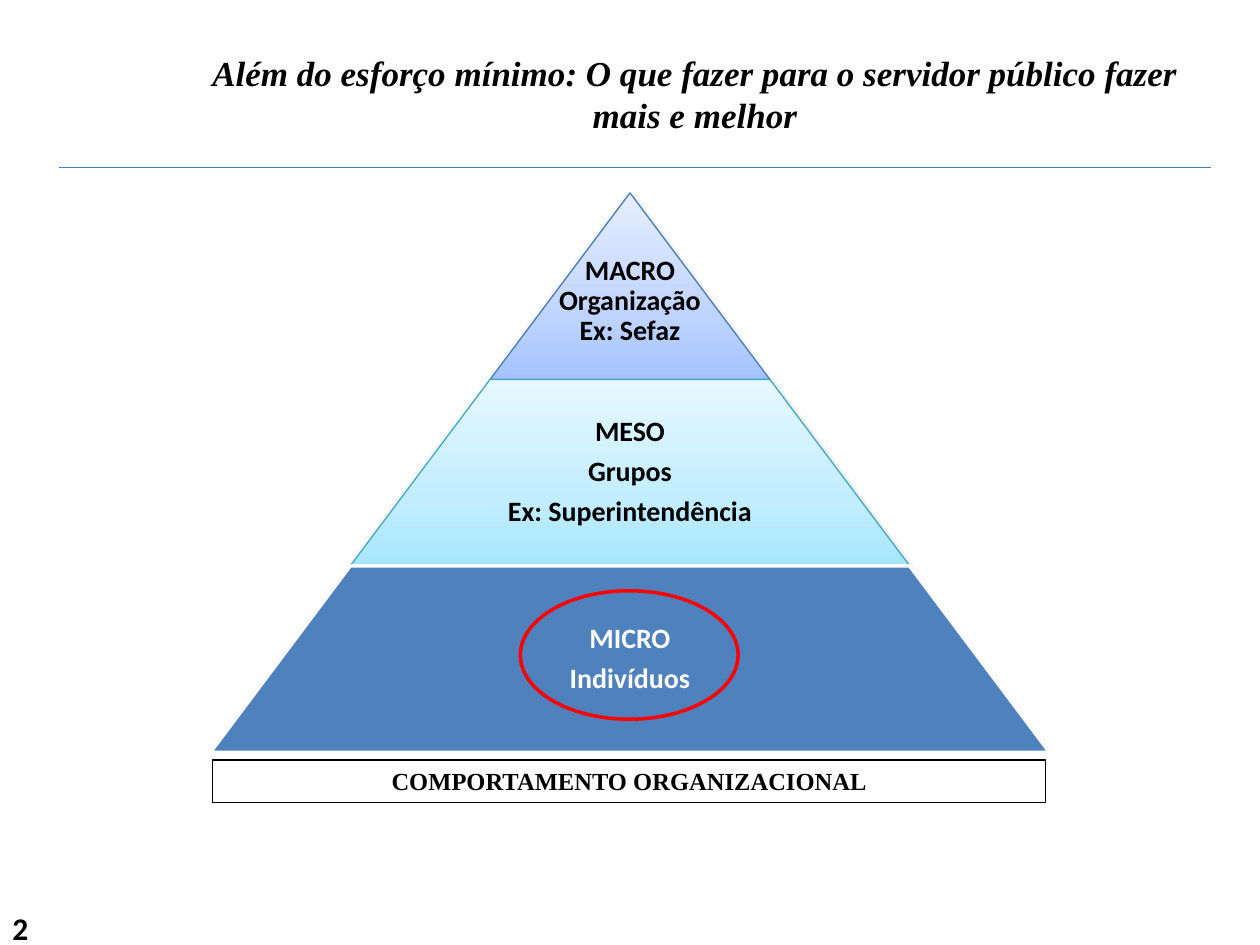
from dataclasses import dataclass

from lxml import etree
from pptx import Presentation
from pptx.dml.color import RGBColor
from pptx.enum.shapes import MSO_CONNECTOR, MSO_SHAPE
from pptx.enum.text import MSO_ANCHOR, MSO_AUTO_SIZE, PP_ALIGN
from pptx.oxml import parse_xml
from pptx.oxml.ns import nsdecls, qn
from pptx.util import Cm, Pt

CENTER, LEFT = PP_ALIGN.CENTER, PP_ALIGN.LEFT
TOP, MIDDLE = MSO_ANCHOR.TOP, MSO_ANCHOR.MIDDLE
GROW = MSO_AUTO_SIZE.SHAPE_TO_FIT_TEXT
TRAPEZOID, RECTANGLE, OVAL = MSO_SHAPE.TRAPEZOID, MSO_SHAPE.RECTANGLE, MSO_SHAPE.OVAL

BLACK = RGBColor(0x00, 0x00, 0x00)
WHITE = RGBColor(0xFF, 0xFF, 0xFF)
RED = RGBColor(0xFF, 0x00, 0x00)
BLUE = RGBColor(0x4F, 0x81, 0xBD)
EDGE_BLUE = RGBColor(0x4B, 0x7E, 0xBC)
EDGE_TEAL = RGBColor(0x46, 0xAA, 0xC5)
BLUE_SHADES = (RGBColor(0xA4, 0xC4, 0xFF), RGBColor(0xBF, 0xD4, 0xFF), RGBColor(0xE6, 0xEE, 0xFF))
TEAL_SHADES = (RGBColor(0xA7, 0xE6, 0xFF), RGBColor(0xC1, 0xED, 0xFF), RGBColor(0xE7, 0xF8, 0xFF))

SANS, SERIF = "Calibri", "Times New Roman"
CENTER_X = 12.7
PYRAMID_TOP, TIER_HEIGHT, TIER_STEP = 3.89, 3.76, 5.64
INSET = 0.05


@dataclass
class Tier:
    lines: tuple[str, ...]
    shades: tuple[RGBColor, ...]
    edge: RGBColor
    edge_width: float = 0.75
    color: RGBColor = BLACK
    text_share: float = 0.65
    space_after: float = 5.6
    top_inset: float = INSET


TIERS = (
    Tier(("MACRO", "Organização", "Ex: Sefaz"), BLUE_SHADES, EDGE_BLUE,
         text_share=1, space_after=0, top_inset=0.66),
    Tier(("MESO", "Grupos", "Ex: Superintendência"), TEAL_SHADES, EDGE_TEAL),
    Tier(("MICRO", "Indivíduos"), (BLUE,), WHITE, edge_width=2, color=WHITE),
)


def write(tf, *lines: str, font=SANS, size=16, color=BLACK, italic=False,
          align=CENTER, anchor=TOP, line_spacing=None, space_after=0) -> None:
    tf.word_wrap = True
    tf.vertical_anchor = anchor
    for i, line in enumerate(lines):
        p = tf.add_paragraph() if i else tf.paragraphs[0]
        p.alignment = align
        p.line_spacing = line_spacing
        p.space_after = Pt(space_after)
        r = p.add_run()
        r.text = line
        r.font.name, r.font.size = font, Pt(size)
        r.font.bold, r.font.italic = True, italic
        r.font.color.rgb = color


def add_text_box(slide, left: float, top: float, width: float, height: float):
    return slide.shapes.add_textbox(Cm(left), Cm(top), Cm(width), Cm(height)).text_frame


def add_outlined(slide, kind, left: float, top: float, width: float, height: float,
                 edge: RGBColor, edge_width: float):
    sp = slide.shapes.add_shape(kind, Cm(left), Cm(top), Cm(width), Cm(height))
    sp.shadow.inherit = False
    sp.fill.background()
    sp.line.color.rgb = edge
    sp.line.width = Pt(edge_width)
    return sp


def shade(sp, shades: tuple[RGBColor, ...]) -> None:
    """Apply a bottom-to-top gradient and a soft shadow below."""
    stops = "".join(f'<a:gs pos="{pos}"><a:srgbClr val="{color}"/></a:gs>'
                    for pos, color in zip((0, 35000, 100000), shades))
    sp_pr = sp._element.spPr
    sp_pr.replace(sp_pr.find(qn("a:noFill")), parse_xml(
        f'<a:gradFill {nsdecls("a")} rotWithShape="1"><a:gsLst>{stops}</a:gsLst>'
        '<a:lin ang="16200000" scaled="0"/></a:gradFill>'))
    sp_pr.find(qn("a:effectLst")).append(parse_xml(
        f'<a:outerShdw {nsdecls("a")} blurRad="{Pt(3.1)}" dist="{Pt(1.6)}" dir="5400000" '
        'rotWithShape="0"><a:srgbClr val="000000"><a:alpha val="38000"/></a:srgbClr>'
        '</a:outerShdw>'))


def add_tier(slide, index: int, tier: Tier) -> None:
    width = TIER_STEP * (index + 1)
    top = PYRAMID_TOP + TIER_HEIGHT * index
    sp = add_outlined(slide, TRAPEZOID, CENTER_X - width / 2, top, width, TIER_HEIGHT,
                      tier.edge, tier.edge_width)
    sp.adjustments[0] = 0.75
    if len(tier.shades) > 1:
        shade(sp, tier.shades)
    else:
        sp.fill.solid()
        sp.fill.fore_color.rgb = tier.shades[0]

    text_width = width * tier.text_share
    tf = add_text_box(slide, CENTER_X - text_width / 2, top, text_width, TIER_HEIGHT)
    tf.margin_left = tf.margin_right = tf.margin_bottom = Cm(INSET)
    tf.margin_top = Cm(tier.top_inset)
    write(tf, *tier.lines, color=tier.color, anchor=MIDDLE,
          line_spacing=0.9, space_after=tier.space_after)


def add_rule(slide, left: float, right: float, y: float) -> None:
    line = slide.shapes.add_connector(MSO_CONNECTOR.STRAIGHT, Cm(left), Cm(y), Cm(right), Cm(y))
    line.line.color.rgb = EDGE_BLUE
    line.line.width = Pt(0.75)
    etree.SubElement(line._element.spPr, qn("a:effectLst"))


def main() -> None:
    prs = Presentation()
    prs.slide_width, prs.slide_height = Cm(25.4), Cm(19.05)
    slide = prs.slides.add_slide(prs.slide_layouts[6])

    add_rule(slide, 1.19, 24.41, 3.38)
    write(add_text_box(slide, 0, 18.21, 25.4, 0.43), "2", size=18, align=LEFT)
    title = add_text_box(slide, 3.71, 0.91, 20.6, 1.96)
    write(title, "Além do esforço mínimo: O que fazer para o servidor público fazer mais e melhor",
          font=SERIF, size=20, italic=True)
    title.auto_size = GROW

    for index, tier in enumerate(TIERS):
        add_tier(slide, index, tier)

    base = add_outlined(slide, RECTANGLE, 4.29, 15.32, 16.79, 0.86, BLACK, 0.75)
    write(base.text_frame, "COMPORTAMENTO ORGANIZACIONAL", font=SERIF, size=14)
    base.text_frame.auto_size = GROW
    add_outlined(slide, OVAL, 10.49, 11.91, 4.39, 2.59, RED, 2)

    prs.save("out.pptx")


if __name__ == "__main__":
    main()
